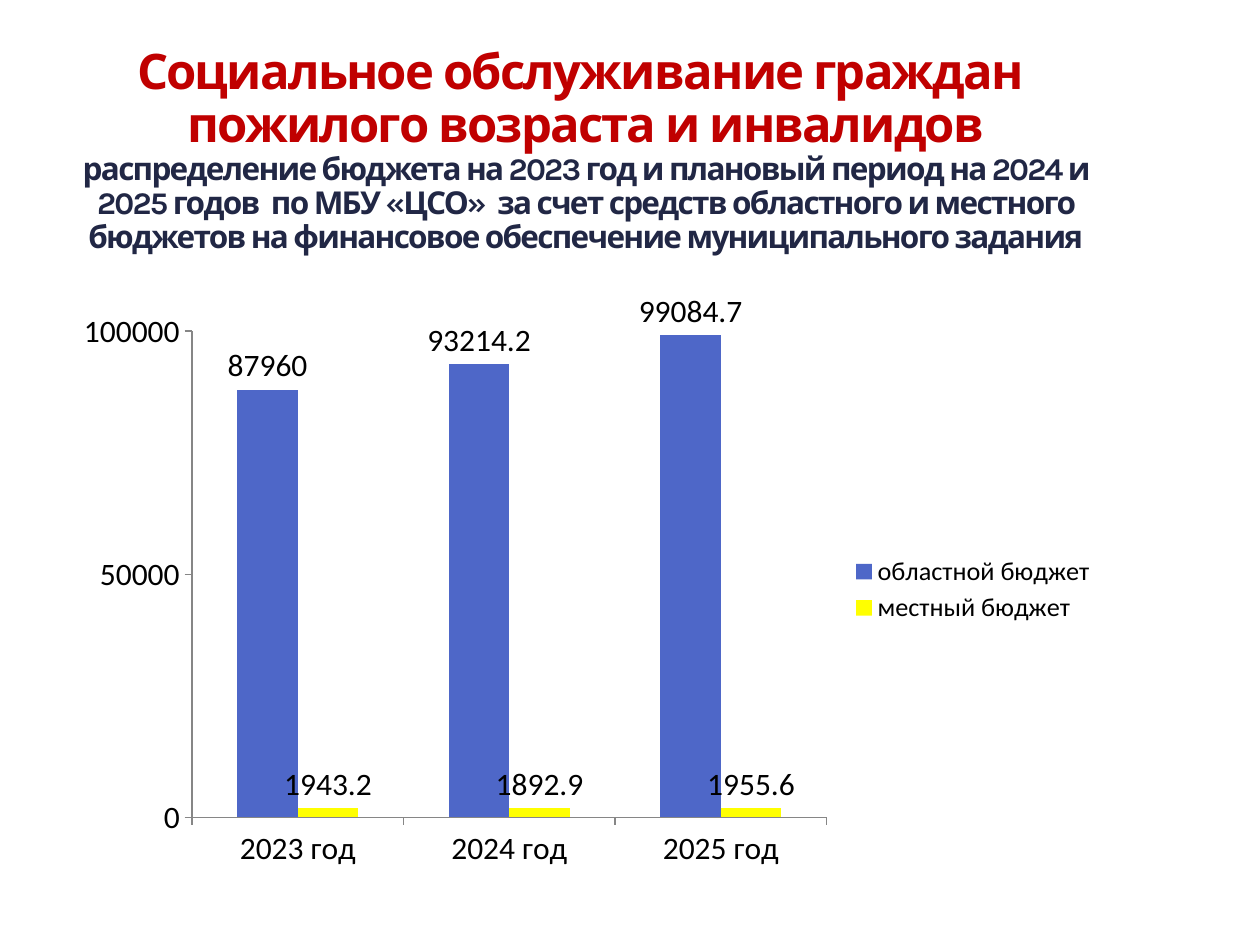
from dataclasses import dataclass

from pptx import Presentation
from pptx.chart.data import CategoryChartData
from pptx.dml.color import RGBColor
from pptx.enum.chart import XL_CHART_TYPE, XL_LABEL_POSITION, XL_LEGEND_POSITION, XL_TICK_MARK
from pptx.enum.text import MSO_ANCHOR, MSO_AUTO_SIZE, PP_ALIGN
from pptx.util import Inches, Pt


@dataclass(frozen=True)
class Theme:
    title_font: str = "Karla"
    chart_font: str = "Calibri"
    heading: str = "C00000"
    subheading: str = "212745"
    text: str = "000000"
    axis: str = "868686"
    regional: str = "4E67C8"
    local: str = "FFFF00"
    heading_size: int = 28
    body_size: int = 18
    legend_size: int = 15


def format_font(font, name, size, color, bold=False):
    font.name = name
    font.size = Pt(size)
    font.bold = bold
    font.color.rgb = RGBColor.from_string(color)


def add_text(para, text, tracking=0, **style):
    for index, line in enumerate(text.split("\n")):
        if index:
            para.add_line_break()
        if line:
            span = para.add_run()
            span.text = line
            format_font(span.font, **style)
            span.font._element.set("spc", str(tracking * 100))


class BudgetSlide:
    def __init__(self, deck, theme):
        self.deck = deck
        self.theme = theme
        self.slide = deck.slides.add_slide(deck.slide_layouts[5])

    def area(self, left, top, width, height):
        page_width, page_height = self.deck.slide_width, self.deck.slide_height
        return (int(left * page_width), int(top * page_height),
                int(width * page_width), int(height * page_height))

    def title(self, heading, subheading, area):
        theme = self.theme
        box = self.slide.shapes.title
        box.left, box.top, box.width, box.height = self.area(*area)
        frame = box.text_frame
        frame.word_wrap = True
        frame.auto_size = MSO_AUTO_SIZE.NONE
        frame.vertical_anchor = MSO_ANCHOR.MIDDLE
        para = frame.paragraphs[0]
        para.alignment = PP_ALIGN.CENTER
        para.line_spacing = 0.9
        style = dict(name=theme.title_font, bold=True, tracking=-1)
        add_text(para, heading + "\n", size=theme.heading_size, color=theme.heading, **style)
        add_text(para, subheading, size=theme.body_size, color=theme.subheading, **style)

    def column_chart(self, categories, series, area, maximum, step):
        theme = self.theme
        data = CategoryChartData(number_format="General")
        data.categories = categories
        for name, values, _ in series:
            data.add_series(name, values)
        chart = self.slide.shapes.add_chart(
            XL_CHART_TYPE.COLUMN_CLUSTERED, *self.area(*area), data).chart
        chart.has_title = False
        format_font(chart.font, theme.chart_font, theme.body_size, theme.text)

        plot = chart.plots[0]
        plot.gap_width = 150
        plot.overlap = 0
        plot.vary_by_categories = False
        for bars, (_, _, color) in zip(plot.series, series):
            bars.invert_if_negative = False
            bars.format.fill.solid()
            bars.format.fill.fore_color.rgb = RGBColor.from_string(color)
            labels = bars.data_labels
            labels.show_value = True
            labels.position = XL_LABEL_POSITION.OUTSIDE_END

        for axis in (chart.category_axis, chart.value_axis):
            axis.has_major_gridlines = False
            axis.major_tick_mark = XL_TICK_MARK.OUTSIDE
            axis.minor_tick_mark = XL_TICK_MARK.NONE
            axis.format.line.color.rgb = RGBColor.from_string(theme.axis)
            axis.format.line.width = Pt(0.75)
        chart.value_axis.minimum_scale = 0
        chart.value_axis.maximum_scale = maximum
        chart.value_axis.major_unit = step

        chart.has_legend = True
        chart.legend.position = XL_LEGEND_POSITION.RIGHT
        chart.legend.include_in_layout = False
        format_font(chart.legend.font, theme.chart_font, theme.legend_size, theme.text)


def main():
    deck = Presentation()
    deck.slide_width, deck.slide_height = Inches(10), Inches(7.5)
    theme = Theme()
    page = BudgetSlide(deck, theme)
    page.title(
        "Социальное обслуживание граждан \nпожилого возраста и инвалидов",
        "распределение бюджета на 2023 год и плановый период на 2024 и 2025 годов  "
        "по МБУ «ЦСО»  за счет средств областного и местного бюджетов "
        "на финансовое обеспечение муниципального задания",
        area=(0.05, 0.04, 0.83, 0.24))
    page.column_chart(
        [f"{year} год" for year in (2023, 2024, 2025)],
        [("областной бюджет", (87960, 93214.2, 99084.7), theme.regional),
         ("местный бюджет", (1943.2, 1892.9, 1955.6), theme.local)],
        area=(0.05, 0.31, 0.83, 0.62), maximum=100000, step=50000)
    deck.save("out.pptx")


if __name__ == "__main__":
    main()
